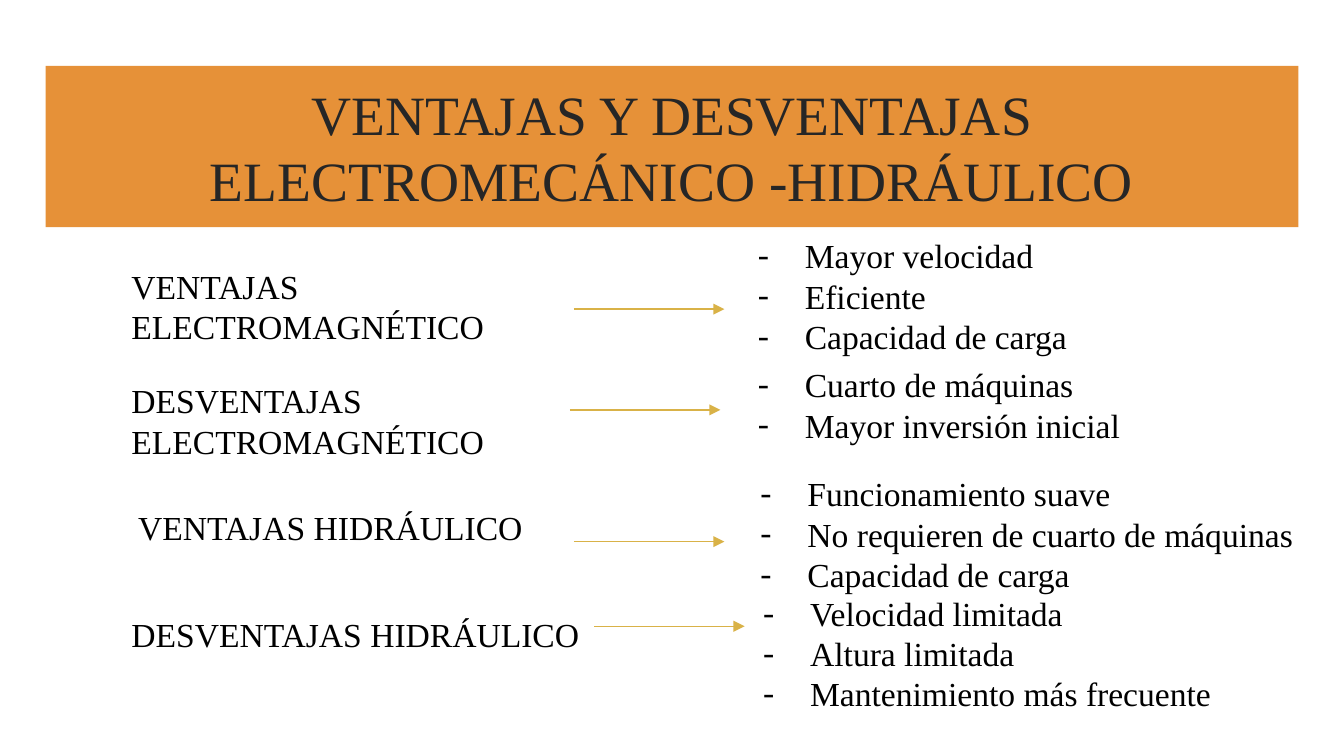
from pptx import Presentation
from pptx.dml.color import RGBColor
from pptx.enum.shapes import MSO_CONNECTOR as CONN
from pptx.enum.text import MSO_ANCHOR as ANCHOR, MSO_AUTO_SIZE as AUTO, PP_ALIGN as ALIGN
from pptx.oxml.xmlchemy import OxmlElement
from pptx.util import Inches, Pt

FONT = "Times New Roman"
ROWS = [
    ("VENTAJAS ELECTROMAGNÉTICO", (0.88, 1.88, 3.63, 0.77), (4.27, 2.3),
     ["Mayor velocidad", "Eficiente", "Capacidad de carga"], (5.39, 1.65, 5.2, 1.01)),
    ("DESVENTAJAS ELECTROMAGNÉTICO", (0.88, 2.73, 3.93, 0.71), (4.24, 3.05),
     ["Cuarto de máquinas", "Mayor inversión inicial"], (5.39, 2.61, 5.2, 0.88)),
    ("VENTAJAS HIDRÁULICO", (0.93, 3.67, 3.63, 0.38), (4.27, 4.03),
     ["Funcionamiento suave", "No requieren de cuarto de máquinas", "Capacidad de carga"],
     (5.41, 3.42, 5.2, 0.88)),
    ("DESVENTAJAS HIDRÁULICO", (0.88, 4.47, 3.93, 0.38), (4.42, 4.66),
     ["Velocidad limitada", "Altura limitada", "Mantenimiento más frecuente"],
     (5.43, 4.31, 5.2, 0.88)),
]


def rgb(value):
    """Turn a hex string into a colour."""
    return RGBColor.from_string(value)


def add_dash(p):
    """Give a paragraph a hanging dash bullet."""
    pPr = p._p.get_or_add_pPr()
    pPr.set("marL", str(Inches(0.5)))
    pPr.set("indent", str(Inches(-0.35)))
    for tag, key, value in (("a:buFont", "typeface", FONT), ("a:buChar", "char", "-")):
        bullet = OxmlElement(tag)
        bullet.set(key, value)
        pPr.append(bullet)


def write(tf, lines, size=18, color="000000", align=ALIGN.LEFT, anchor=ANCHOR.TOP, dash=False):
    """Fill a text frame with one formatted paragraph per line."""
    tf.word_wrap = True
    tf.auto_size = AUTO.NONE
    tf.vertical_anchor = anchor
    tf.margin_left = tf.margin_right = tf.margin_top = tf.margin_bottom = Inches(0.1)
    for i, line in enumerate(lines):
        p = tf.paragraphs[0] if i == 0 else tf.add_paragraph()
        p.alignment = align
        if dash:
            add_dash(p)
        r = p.add_run()
        r.text = line
        r.font.name, r.font.size = FONT, Pt(size)
        r.font.color.rgb = rgb(color)


def add_title(s, text):
    """Place the title on its orange band."""
    sp = s.shapes.title
    sp.left, sp.top, sp.width, sp.height = map(Inches, (0.34, 0.49, 9.32, 1.2))
    sp.fill.solid()
    sp.fill.fore_color.rgb = rgb("E69138")
    write(sp.text_frame, [text], size=29.7, color="262626", align=ALIGN.CENTER,
          anchor=ANCHOR.MIDDLE)


def add_text(s, box, lines, **fmt):
    """Add a text box."""
    write(s.shapes.add_textbox(*map(Inches, box)).text_frame, lines, **fmt)


def add_arrow(s, x, y, length=1.12):
    """Add a horizontal gold arrow pointing right."""
    sp = s.shapes.add_connector(CONN.STRAIGHT, *map(Inches, (x, y, x + length, y)))
    sp.line.color.rgb = rgb("D9B247")
    sp.line.width = Pt(0.75)
    head = OxmlElement("a:tailEnd")
    head.set("type", "triangle")
    sp.line._get_or_add_ln().append(head)
    sp._element.spPr.append(OxmlElement("a:effectLst"))


def main():
    """Build the slide and save it."""
    prs = Presentation()
    prs.slide_width, prs.slide_height = Inches(10), Inches(10 * 9 / 16)
    s = prs.slides.add_slide(prs.slide_layouts[5])
    add_title(s, "VENTAJAS Y DESVENTAJAS ELECTROMECÁNICO -HIDRÁULICO")
    for label, label_box, start, points, list_box in ROWS:
        add_text(s, label_box, [label])
        add_text(s, list_box, points, dash=True)
        add_arrow(s, *start)
    prs.save("out.pptx")


if __name__ == "__main__":
    main()
